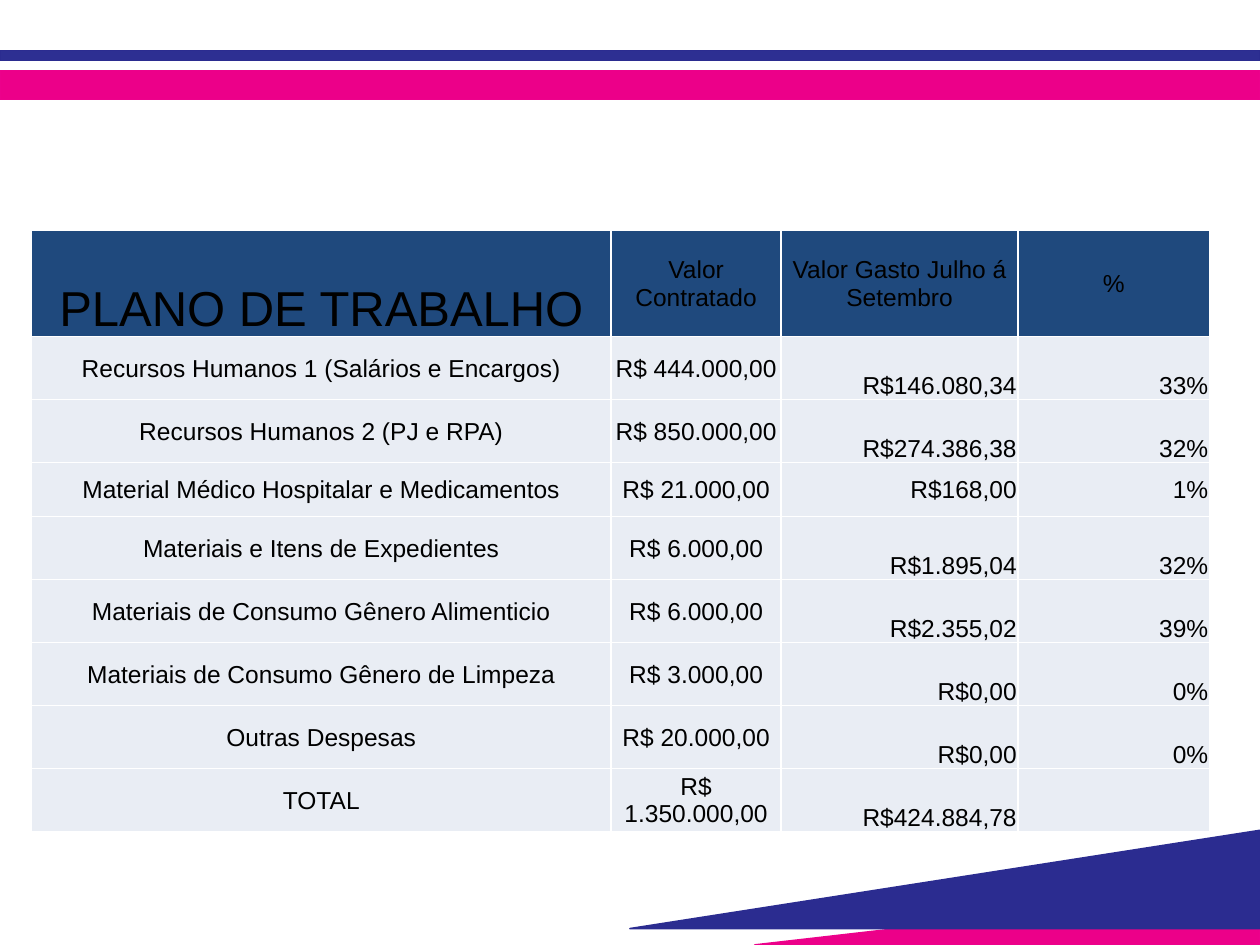
from lxml.etree import SubElement
from pptx import Presentation
from pptx.dml.color import RGBColor
from pptx.enum.shapes import MSO_CONNECTOR as Connector, MSO_SHAPE as Shape
from pptx.enum.text import MSO_ANCHOR as Anchor, PP_ALIGN as Align
from pptx.oxml.ns import qn
from pptx.util import Inches, Pt

NAVY, PINK, PINK_EDGE = "2B2C90", "EC0089", "EC018B"
HEADER_FILL, BODY_FILL, WHITE, BLACK = "1F497D", "E9EDF4", "FFFFFF", "000000"


def rgb(value):
    return RGBColor.from_string(value)


def add_border(cell, side, color, width):
    border = SubElement(cell._tc.get_or_add_tcPr(), qn(f"a:{side}"), w=str(Pt(width)))
    fill = SubElement(border, qn("a:solidFill"))
    SubElement(fill, qn("a:srgbClr"), val=color)


prs = Presentation()
prs.slide_width, prs.slide_height = Inches(10), Inches(7.5)
slide = prs.slides.add_slide(prs.slide_layouts[6])

# Top stripes: a thick navy rule with its outline, then a pink band
rule = slide.shapes.add_connector(
    Connector.STRAIGHT, Inches(0), Inches(0.44), Inches(10), Inches(0.44))
rule.line.color.rgb = rgb("2D2F92")
rule.line.width = Pt(5.64)
SubElement(rule._element.spPr, qn("a:effectLst"))

for top, height, fill, edge in [(0.4, 0.08, None, NAVY), (0.56, 0.23, PINK, PINK_EDGE)]:
    stripe = slide.shapes.add_shape(
        Shape.RECTANGLE, Inches(0), Inches(top), Inches(10), Inches(height))
    stripe.shadow.inherit = False
    if fill:
        stripe.fill.solid()
        stripe.fill.fore_color.rgb = rgb(fill)
    else:
        stripe.fill.background()
    stripe.line.color.rgb = rgb(edge)
    stripe.line.width = Pt(0.96)

# Bottom wedges, rising to the right edge
for tip, top, base, fill, edge in [(5.99, 7.04, 7.5, PINK, PINK_EDGE),
                                   (5, 6.59, 7.37, NAVY, NAVY)]:
    outline = slide.shapes.build_freeform(Inches(10), Inches(top))
    outline.add_line_segments(
        [(Inches(tip), Inches(base)), (Inches(10), Inches(base))], close=True)
    wedge = outline.convert_to_shape()
    wedge.shadow.inherit = False
    wedge.fill.solid()
    wedge.fill.fore_color.rgb = rgb(fill)
    wedge.line.color.rgb = rgb(edge)
    wedge.line.width = Pt(0.96)

# Work plan table
budget = [
    ("PLANO DE TRABALHO", "Valor Contratado", "Valor Gasto Julho á Setembro", "%"),
    ("Recursos Humanos 1 (Salários e Encargos)", "R$ 444.000,00", "R$146.080,34", "33%"),
    ("Recursos Humanos 2 (PJ e RPA)", "R$ 850.000,00", "R$274.386,38", "32%"),
    ("Material Médico Hospitalar e Medicamentos", "R$ 21.000,00", "R$168,00", "1%"),
    ("Materiais e Itens de Expedientes", "R$ 6.000,00", "R$1.895,04", "32%"),
    ("Materiais de Consumo Gênero Alimenticio", "R$ 6.000,00", "R$2.355,02", "39%"),
    ("Materiais de Consumo Gênero de Limpeza", "R$ 3.000,00", "R$0,00", "0%"),
    ("Outras Despesas", "R$ 20.000,00", "R$0,00", "0%"),
    ("TOTAL", "R$ 1.350.000,00", "R$424.884,78", ""),
]
col_widths = [4.6, 1.35, 1.88, 1.52]
SUPPLIES_ROW = 3  # the shorter row, centred vertically throughout

plan = slide.shapes.add_table(
    len(budget), len(col_widths),
    Inches(0.25), Inches(1.83), Inches(9.35), Inches(4.75)).table
for column, width in zip(plan.columns, col_widths):
    column.width = Inches(width)

for r, entries in enumerate(budget):
    plan.rows[r].height = Inches({0: 0.84, SUPPLIES_ROW: 0.43}.get(r, 0.5))
    for c, entry in enumerate(entries):
        cell = plan.cell(r, c)
        is_title = r == 0 and c == 0
        is_spending = r > 0 and c >= 2
        for side in ("lnL", "lnR", "lnT", "lnB"):
            add_border(cell, side, WHITE, 1)
        cell.fill.solid()
        cell.fill.fore_color.rgb = rgb(BODY_FILL if r else HEADER_FILL)
        cell.margin_left = cell.margin_right = cell.margin_top = Inches(0.01)
        cell.margin_bottom = Inches(0)
        at_bottom = is_title or (is_spending and r != SUPPLIES_ROW)
        cell.vertical_anchor = Anchor.BOTTOM if at_bottom else Anchor.MIDDLE
        paragraph = cell.text_frame.paragraphs[0]
        paragraph.alignment = Align.RIGHT if is_spending else Align.CENTER
        if entry:
            run = paragraph.add_run()
            run.text = entry
            run.font.name = "Arial"
            run.font.size = Pt(28 if is_title else 14)
            run.font.bold = False
            run.font.color.rgb = rgb(BLACK)

prs.save("out.pptx")
